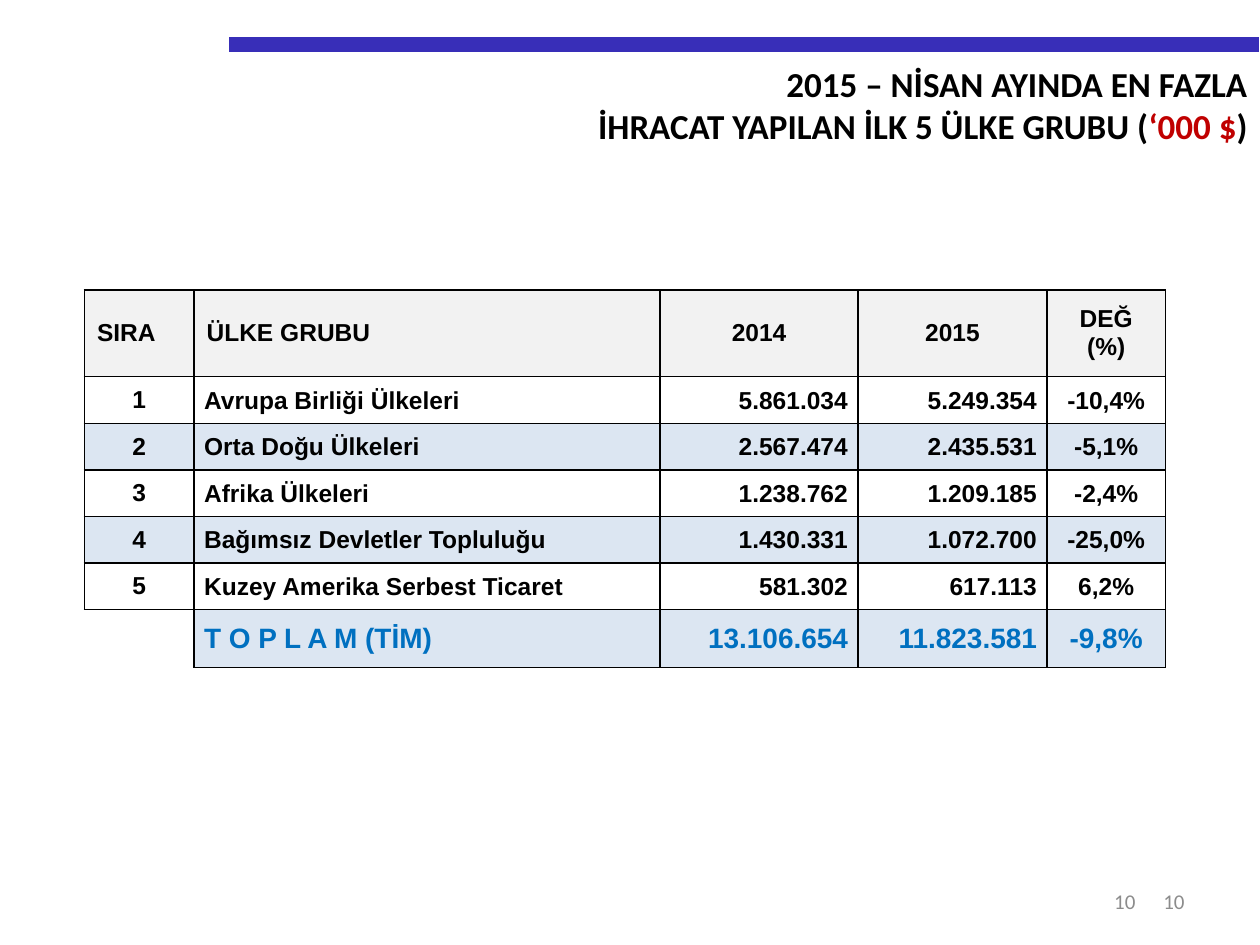
from lxml import etree
from pptx import Presentation
from pptx.dml.color import RGBColor
from pptx.enum.shapes import MSO_CONNECTOR
from pptx.enum.text import MSO_ANCHOR, PP_ALIGN
from pptx.oxml.ns import qn
from pptx.util import Inches, Pt

LEFT, CENTER, RIGHT = PP_ALIGN.LEFT, PP_ALIGN.CENTER, PP_ALIGN.RIGHT
TOP, MIDDLE = MSO_ANCHOR.TOP, MSO_ANCHOR.MIDDLE
STRAIGHT = MSO_CONNECTOR.STRAIGHT

BLACK = RGBColor(0x00, 0x00, 0x00)
GRAY = RGBColor(0x8C, 0x8C, 0x8C)
RED = RGBColor(0xC0, 0x00, 0x00)
BLUE = RGBColor(0x00, 0x70, 0xC0)
INDIGO = RGBColor(0x38, 0x2E, 0xB8)
HEADER_FILL = RGBColor(0xF2, 0xF2, 0xF2)
BAND_FILL = RGBColor(0xDC, 0xE6, 0xF2)

TITLE = [
    [("2015 – NİSAN AYINDA EN FAZLA", BLACK)],
    [("İHRACAT YAPILAN İLK 5 ÜLKE GRUBU (", BLACK), ("‘000 $", RED), (")", BLACK)],
]
PAGE_NUMBER = [[("10", GRAY)]]
PAGE_NUMBER_BOXES = [(7.17, 6.95, 2.33, 0.4), (7.01, 6.95, 2.1, 0.4)]

HEADER = ("SIRA", "ÜLKE GRUBU", "2014", "2015", "DEĞ\n(%)")
COUNTRY_GROUPS = [
    ("1", "Avrupa Birliği Ülkeleri", "5.861.034", "5.249.354", "-10,4%"),
    ("2", "Orta Doğu Ülkeleri", "2.567.474", "2.435.531", "-5,1%"),
    ("3", "Afrika Ülkeleri", "1.238.762", "1.209.185", "-2,4%"),
    ("4", "Bağımsız Devletler Topluluğu", "1.430.331", "1.072.700", "-25,0%"),
    ("5", "Kuzey Amerika Serbest Ticaret", "581.302", "617.113", "6,2%"),
]
TOTAL = ("", "T O P L A M (TİM)", "13.106.654", "11.823.581", "-9,8%")

COLUMN_WIDTHS = (0.87, 3.7, 1.57, 1.5, 0.94)
ROW_HEIGHTS = (0.69,) + (0.37,) * len(COUNTRY_GROUPS) + (0.46,)
HEADER_ALIGNMENTS = (LEFT, LEFT, CENTER, CENTER, CENTER)
BODY_ALIGNMENTS = (CENTER, LEFT, RIGHT, RIGHT, CENTER)


def style_font(font, name, size, color, bold):
    font.name, font.size, font.bold = name, Pt(size), bold
    font.color.rgb = color


def add_right_text(slide, box, lines, size, bold, anchor):
    """Add a right-aligned text box; each line is a list of (text, color)."""
    frame = slide.shapes.add_textbox(*map(Inches, box)).text_frame
    frame.word_wrap = True
    frame.vertical_anchor = anchor
    for index, parts in enumerate(lines):
        paragraph = frame.add_paragraph() if index else frame.paragraphs[0]
        paragraph.alignment = RIGHT
        for text, color in parts:
            run = paragraph.add_run()
            run.text = text
            style_font(run.font, "Calibri", size, color, bold)


def add_top_rule(slide):
    rule = slide.shapes.add_connector(
        STRAIGHT, Inches(1.82), Inches(0.35), Inches(9.99), Inches(0.35))
    rule.line.color.rgb = INDIGO
    rule.line.width = Pt(8.5)
    etree.SubElement(rule._element.spPr, qn("a:effectLst"))


def set_borders(cell, visible_sides):
    properties = cell._tc.get_or_add_tcPr()
    for position, side in enumerate("LRTB"):
        line = etree.Element(qn(f"a:ln{side}"), w=str(Pt(1)))
        if side in visible_sides:
            fill = etree.SubElement(line, qn("a:solidFill"))
            etree.SubElement(fill, qn("a:srgbClr"), val=str(BLACK))
        else:
            etree.SubElement(line, qn("a:noFill"))
        properties.insert(position, line)


def fill_cell(cell, text, alignment, size, color, fill):
    cell.vertical_anchor = MIDDLE
    if fill is None:
        cell.fill.background()
    else:
        cell.fill.solid()
        cell.fill.fore_color.rgb = fill
    cell.text_frame.text = text
    for paragraph in cell.text_frame.paragraphs:
        paragraph.alignment = alignment
        for run in paragraph.runs:
            style_font(run.font, "Arial", size, color, True)


def set_data_margins(cell, alignment):
    cell.margin_left = Inches(0.08 if alignment == LEFT else 0.01)
    cell.margin_right = Inches(0.08 if alignment == RIGHT else 0.01)
    cell.margin_top, cell.margin_bottom = Inches(0.01), 0


def add_export_table(slide):
    rows = [HEADER, *COUNTRY_GROUPS, TOTAL]
    last = len(rows) - 1
    table = slide.shapes.add_table(
        len(rows), len(HEADER), Inches(0.67), Inches(2.3),
        Inches(sum(COLUMN_WIDTHS)), Inches(sum(ROW_HEIGHTS))).table
    table.first_row = table.horz_banding = False
    for column, width in zip(table.columns, COLUMN_WIDTHS):
        column.width = Inches(width)
    for row, height in zip(table.rows, ROW_HEIGHTS):
        row.height = Inches(height)

    for r, values in enumerate(rows):
        alignments = BODY_ALIGNMENTS if r else HEADER_ALIGNMENTS
        row_fill = HEADER_FILL if r == 0 else BAND_FILL if r % 2 == 0 else None
        size, color = (16, BLUE) if r == last else (14, BLACK)
        for c, text in enumerate(values):
            cell = table.cell(r, c)
            empty_corner = r == last and c == 0
            fill = None if empty_corner else row_fill
            fill_cell(cell, text, alignments[c], size, color, fill)
            if r and c:
                set_data_margins(cell, alignments[c])
            set_borders(cell, "RT" if empty_corner else "LRTB")


def main():
    presentation = Presentation()
    presentation.slide_width, presentation.slide_height = Inches(10), Inches(7.5)
    slide = presentation.slides.add_slide(presentation.slide_layouts[6])
    add_top_rule(slide)
    for box in PAGE_NUMBER_BOXES:
        add_right_text(slide, box, PAGE_NUMBER, 12, False, MIDDLE)
    add_right_text(slide, (1.06, 0.45, 8.94, 0.77), TITLE, 20, True, TOP)
    add_export_table(slide)
    presentation.save("out.pptx")


if __name__ == "__main__":
    main()
